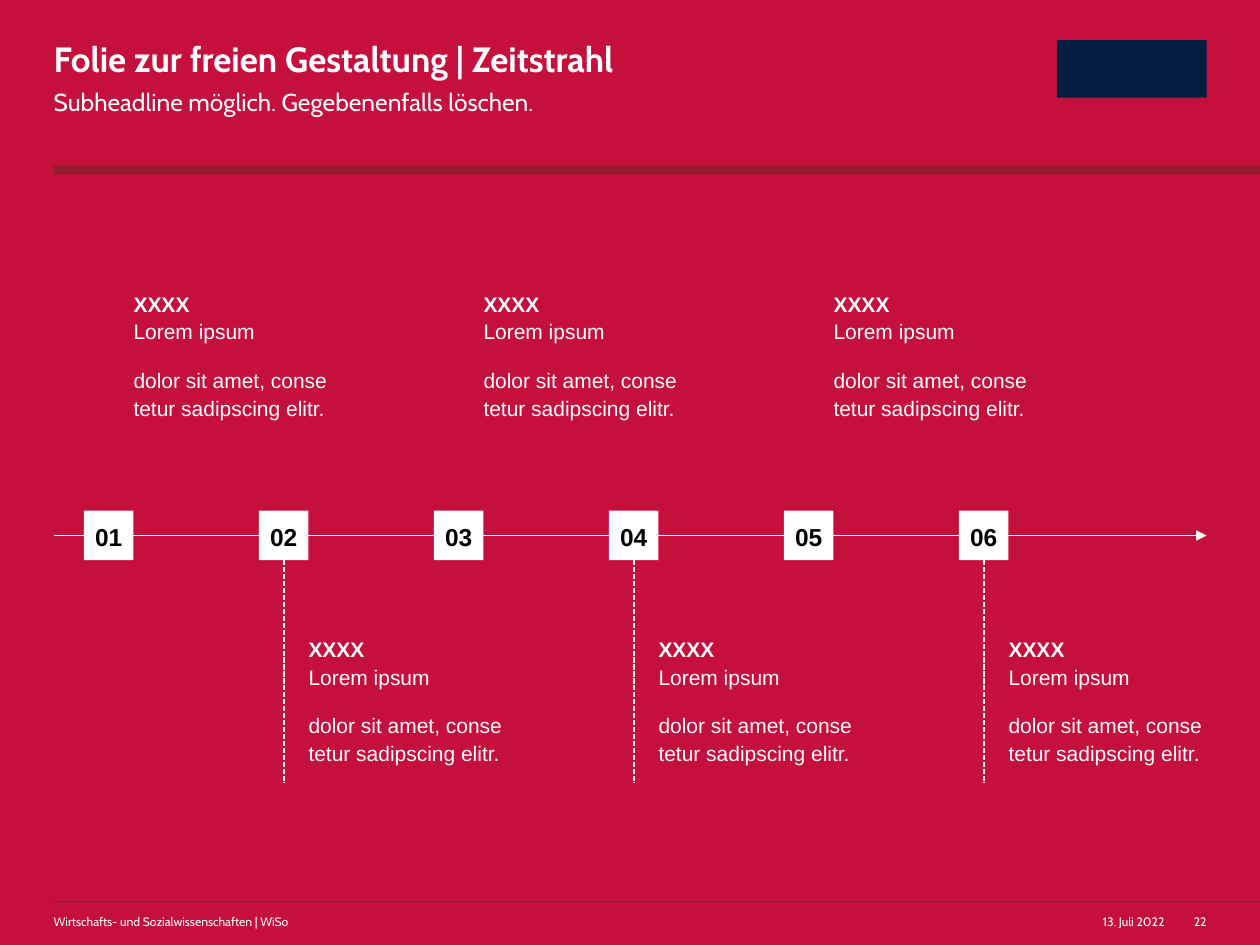
from dataclasses import dataclass

from lxml import etree
from pptx import Presentation
from pptx.dml.color import RGBColor
from pptx.enum.dml import MSO_LINE
from pptx.enum.shapes import MSO_CONNECTOR, MSO_SHAPE
from pptx.enum.text import MSO_ANCHOR, MSO_AUTO_SIZE, PP_ALIGN
from pptx.oxml.ns import qn
from pptx.util import Pt

RECTANGLE = MSO_SHAPE.RECTANGLE
STRAIGHT = MSO_CONNECTOR.STRAIGHT
DASH = MSO_LINE.SQUARE_DOT
TOP, MIDDLE = MSO_ANCHOR.TOP, MSO_ANCHOR.MIDDLE
NO_RESIZE = MSO_AUTO_SIZE.NONE
LEFT, CENTER, RIGHT = PP_ALIGN.LEFT, PP_ALIGN.CENTER, PP_ALIGN.RIGHT


@dataclass(frozen=True)
class Theme:
    background: str = "C50F3C"
    rule: str = "971B2F"
    emblem: str = "041E42"
    light: str = "FFFFFF"
    dark: str = "000000"
    heading_font: str = "Cabin"
    body_font: str = "Arial"
    title_size: int = 20
    subtitle_size: int = 14
    number_size: int = 14
    body_size: int = 12
    footer_size: int = 7


class SlideBuilder:
    def __init__(self, slide, theme):
        self.slide = slide
        self.theme = theme
        fill = slide.background.fill
        fill.solid()
        fill.fore_color.rgb = RGBColor.from_string(theme.background)

    def frame(self, shape, anchor=TOP, wrap=True):
        frame = shape.text_frame
        frame.margin_left = frame.margin_right = 0
        frame.margin_top = frame.margin_bottom = 0
        frame.auto_size = NO_RESIZE
        frame.word_wrap = wrap
        frame.vertical_anchor = anchor
        return frame

    def style(self, para, font, size, color, bold=False, align=LEFT, spacing=1.0, after=0):
        para.alignment = align
        para.line_spacing = spacing
        para.space_before = Pt(0)
        para.space_after = Pt(after)
        for span in para.runs:
            span.font.name = font
            span.font.size = Pt(size)
            span.font.bold = bold
            span.font.color.rgb = RGBColor.from_string(color)

    def title(self, text, left, top, width, height):
        box = self.slide.shapes.title
        box.left, box.top, box.width, box.height = Pt(left), Pt(top), Pt(width), Pt(height)
        frame = self.frame(box)
        frame.text = text
        self.style(frame.paragraphs[0], self.theme.heading_font, self.theme.title_size,
                   self.theme.light, bold=True, spacing=0.9)

    def text_box(self, left, top, width, height, wrap=True):
        box = self.slide.shapes.add_textbox(Pt(left), Pt(top), Pt(width), Pt(height))
        return self.frame(box, wrap=wrap)

    def label(self, text, left, top, width, height, size, **options):
        frame = self.text_box(left, top, width, height)
        frame.text = text
        self.style(frame.paragraphs[0], self.theme.heading_font, size, self.theme.light, **options)

    def bar(self, left, top, width, height, color):
        bar = self.slide.shapes.add_shape(RECTANGLE, Pt(left), Pt(top), Pt(width), Pt(height))
        bar.shadow.inherit = False
        bar.fill.solid()
        bar.fill.fore_color.rgb = RGBColor.from_string(color)
        bar.line.fill.background()
        return bar

    def marker(self, text, left, top, side):
        frame = self.frame(self.bar(left, top, side, side, self.theme.light), anchor=MIDDLE)
        frame.text = text
        self.style(frame.paragraphs[0], self.theme.body_font, self.theme.number_size,
                   self.theme.dark, bold=True, align=CENTER, spacing=1.1, after=12)

    def entry(self, paragraphs, left, top, width, height):
        frame = self.text_box(left, top, width, height, wrap=False)
        frame.text = "\n".join(paragraphs)
        for para in frame.paragraphs:
            self.style(para, self.theme.body_font, self.theme.body_size, self.theme.light,
                       spacing=1.1, after=12)
        frame.paragraphs[0].runs[0].font.bold = True

    def line(self, start, end, dash=None, arrow=False):
        line = self.slide.shapes.add_connector(STRAIGHT, *map(Pt, start + end))
        line.line.color.rgb = RGBColor.from_string(self.theme.light)
        line.line.width = Pt(1)
        if dash:
            line.line.dash_style = dash
        properties = line._element.spPr
        if arrow:
            etree.SubElement(properties.find(qn("a:ln")), qn("a:tailEnd"), type="triangle")
        etree.SubElement(properties, qn("a:effectLst"))


def main():
    deck = Presentation()
    deck.slide_width, deck.slide_height = Pt(720), Pt(540)
    theme = Theme()
    page = SlideBuilder(deck.slides.add_slide(deck.slide_layouts[5]), theme)

    margin, right_edge = 30.7, 689.5
    page.bar(margin, 515, 720 - margin, 0.7, theme.rule)
    page.bar(margin, 94.2, 720 - margin, 5.5, theme.rule)
    page.bar(604, 23, right_edge - 604, 32.8, theme.emblem)

    page.title("Folie zur freien Gestaltung | Zeitstrahl", margin, 24, 404, 21.6)
    page.label("Subheadline möglich. Gegebenenfalls löschen.", margin, 48.2, 404, 17.3,
               theme.subtitle_size, spacing=1.1, after=8)

    footer_top, footer_height = 522.5, 8.6
    page.label("Wirtschafts- und Sozialwissenschaften | WiSo", margin, footer_top, 323,
               footer_height, theme.footer_size)
    page.label("13. Juli 2022", 615.4, footer_top, 50, footer_height, theme.footer_size, align=RIGHT)
    page.label("22", 669.5, footer_top, 20, footer_height, theme.footer_size, align=RIGHT)

    axis, side, first, step = 306, 28.3, 48, 100
    upper_top, lower_top, stem_end = 165, 362.4, 447.6
    paragraphs = ["XXXX\vLorem ipsum", "dolor sit amet, conse\vtetur sadipscing elitr."]
    page.line((margin, axis), (right_edge, axis), arrow=True)
    for index in range(6):
        left = first + index * step
        below = index % 2 == 1
        page.marker(f"{index + 1:02}", left, axis - side / 2, side)
        page.entry(paragraphs, left + side, lower_top if below else upper_top, 111.6, 75)
        if below:
            center = left + side / 2
            page.line((center, axis + side / 2), (center, stem_end), dash=DASH)

    deck.save("out.pptx")


if __name__ == "__main__":
    main()
